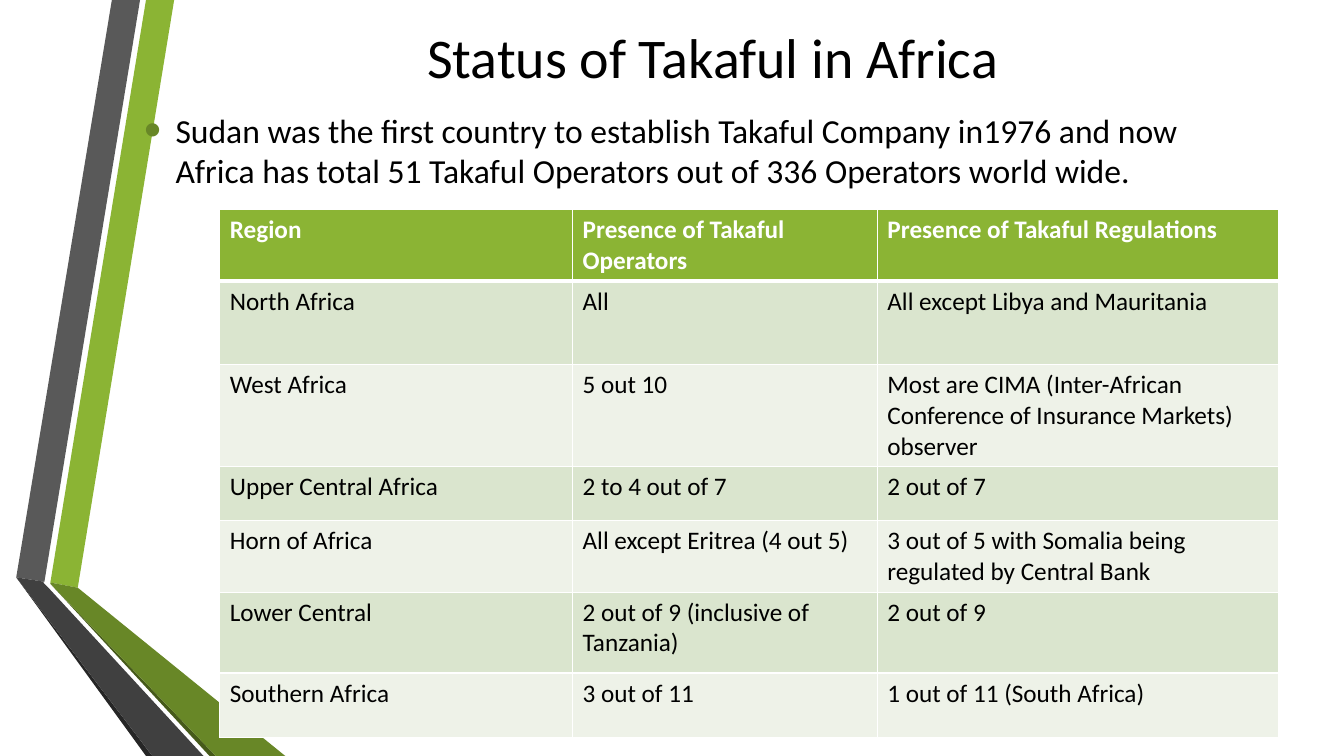
from lxml import etree
from pptx import Presentation
from pptx.dml.color import RGBColor
from pptx.enum.text import MSO_ANCHOR, MSO_AUTO_SIZE, PP_ALIGN
from pptx.oxml.ns import qn
from pptx.util import Cm, Pt

CENTER = PP_ALIGN.CENTER
MIDDLE, TOP = MSO_ANCHOR.MIDDLE, MSO_ANCHOR.TOP
NO_AUTOFIT = MSO_AUTO_SIZE.NONE
FONT = "Calibri"
COLORS = {
    "green": "8BB434", "dark green": "688727", "deep green": "465A1A",
    "gray": "595959", "dark gray": "404040", "deep gray": "262626",
    "band": "DAE5CE", "pale band": "EEF2E8",
    "black": "000000", "white": "FFFFFF",
}


def style_font(paragraph, size, color, bold=False):
    paragraph.font.name = FONT
    paragraph.font.size = Pt(size)
    paragraph.font.bold = bold
    paragraph.font.color.rgb = RGBColor.from_string(COLORS[color])


def add_border(cell, side, width):
    """Add a white line to one side (L, R, T or B) of a table cell."""
    properties = cell._tc.get_or_add_tcPr()
    line = etree.SubElement(properties, qn(f"a:ln{side}"), w=str(Pt(width)))
    fill = etree.SubElement(line, qn("a:solidFill"))
    etree.SubElement(fill, qn("a:srgbClr"), val=COLORS["white"])


presentation = Presentation()
presentation.slide_width = Cm(33.87)
presentation.slide_height = Cm(19.05)
slide = presentation.slides.add_slide(presentation.slide_layouts[1])
title, body = slide.placeholders

# Folded ribbons on the left, corner points in centimetres
ribbons = [
    ("green", [(1.27, 14.68), (1.96, 14.81), (4.39, 0), (3.68, 0)]),
    ("gray", [(3.53, 0), (2.82, 0), (0.41, 14.55), (1.12, 14.66)]),
    ("deep gray", [(0.41, 14.55), (3.68, 19.05), (3.84, 19.05)]),
    ("deep green", [(1.27, 14.71), (5.28, 19.05), (5.44, 19.05)]),
    ("dark green", [(1.27, 14.71), (5.44, 19.05), (7.19, 19.05),
                    (1.96, 14.81), (1.27, 14.68)]),
    ("dark gray", [(5.13, 19.05), (1.22, 14.81), (1.09, 14.68),
                   (1.12, 14.66), (0.41, 14.55), (3.84, 19.05)]),
]
for color, corners in ribbons:
    points = [(Cm(x), Cm(y)) for x, y in corners]
    builder = slide.shapes.build_freeform(*points[0])
    builder.add_line_segments(points[1:], close=True)
    ribbon = builder.convert_to_shape()
    ribbon.shadow.inherit = False
    ribbon.fill.solid()
    ribbon.fill.fore_color.rgb = RGBColor.from_string(COLORS[color])
    ribbon.line.fill.background()
    # Keep the ribbons behind the title and list
    title._element.addprevious(ribbon._element)

# Title
title.left, title.top, title.width, title.height = Cm(4.04), Cm(0), Cm(27.84), Cm(2.84)
title.text_frame.text = "Status of Takaful in Africa"
title.text_frame.auto_size = NO_AUTOFIT
title.text_frame.vertical_anchor = MIDDLE
title_paragraph = title.text_frame.paragraphs[0]
title_paragraph.alignment = CENTER
style_font(title_paragraph, 40, "black")

# Bulleted statement
body.left, body.top, body.width, body.height = Cm(3.38), Cm(2.64), Cm(27.1), Cm(2.5)
body.text_frame.text = (
    "Sudan was the first country to establish Takaful Company in1976 and now "
    "Africa has total 51 Takaful Operators out of 336 Operators world wide."
)
body.text_frame.auto_size = NO_AUTOFIT
body.text_frame.vertical_anchor = TOP
statement = body.text_frame.paragraphs[0]
properties = statement._p.get_or_add_pPr()
properties.set("marL", str(Cm(0.79)))
properties.set("indent", str(Cm(-0.79)))
bullet_color = etree.SubElement(properties, qn("a:buClr"))
etree.SubElement(bullet_color, qn("a:srgbClr"), val=COLORS["dark green"])
etree.SubElement(properties, qn("a:buSzPct"), val="145000")
etree.SubElement(properties, qn("a:buFont"), typeface="Arial")
etree.SubElement(properties, qn("a:buChar"), char="•")
statement.space_before = Pt(0)
style_font(statement, 24, "black")

# Table of regions
rows = [
    ("Region", "Presence of Takaful Operators", "Presence of Takaful Regulations"),
    ("North Africa", "All", "All except Libya and Mauritania"),
    ("West Africa", "5 out 10",
     "Most are CIMA (Inter-African Conference of Insurance Markets) observer"),
    ("Upper Central Africa", "2 to 4 out of 7", "2 out of 7"),
    ("Horn of Africa", "All except Eritrea (4 out 5)",
     "3 out of 5 with Somalia being regulated by Central Bank"),
    ("Lower Central", "2 out of 9 (inclusive of Tanzania)", "2 out of 9"),
    ("Southern Africa", "3 out of 11", "1 out of 11 (South Africa)"),
]
column_widths = [8.89, 7.68, 10.12]
row_heights = [1.68, 2.1, 2.26, 1.35, 1.8, 2.04, 1.63]
table = slide.shapes.add_table(
    len(rows), len(column_widths), Cm(5.54), Cm(5.28),
    Cm(sum(column_widths)), Cm(sum(row_heights)),
).table
for column, width in zip(table.columns, column_widths):
    column.width = Cm(width)
for row_index, (texts, height) in enumerate(zip(rows, row_heights)):
    table.rows[row_index].height = Cm(height)
    is_header = row_index == 0
    if is_header:
        fill_color = "green"
    else:
        fill_color = "band" if row_index % 2 else "pale band"
    for column_index, text in enumerate(texts):
        cell = table.cell(row_index, column_index)
        cell.text = text
        style_font(cell.text_frame.paragraphs[0], 18,
                   "white" if is_header else "black", bold=is_header)
        add_border(cell, "L", 1)
        add_border(cell, "R", 1)
        add_border(cell, "T", 3 if row_index == 1 else 1)
        add_border(cell, "B", 3 if is_header else 1)
        cell.fill.solid()
        cell.fill.fore_color.rgb = RGBColor.from_string(COLORS[fill_color])

presentation.save("out.pptx")
